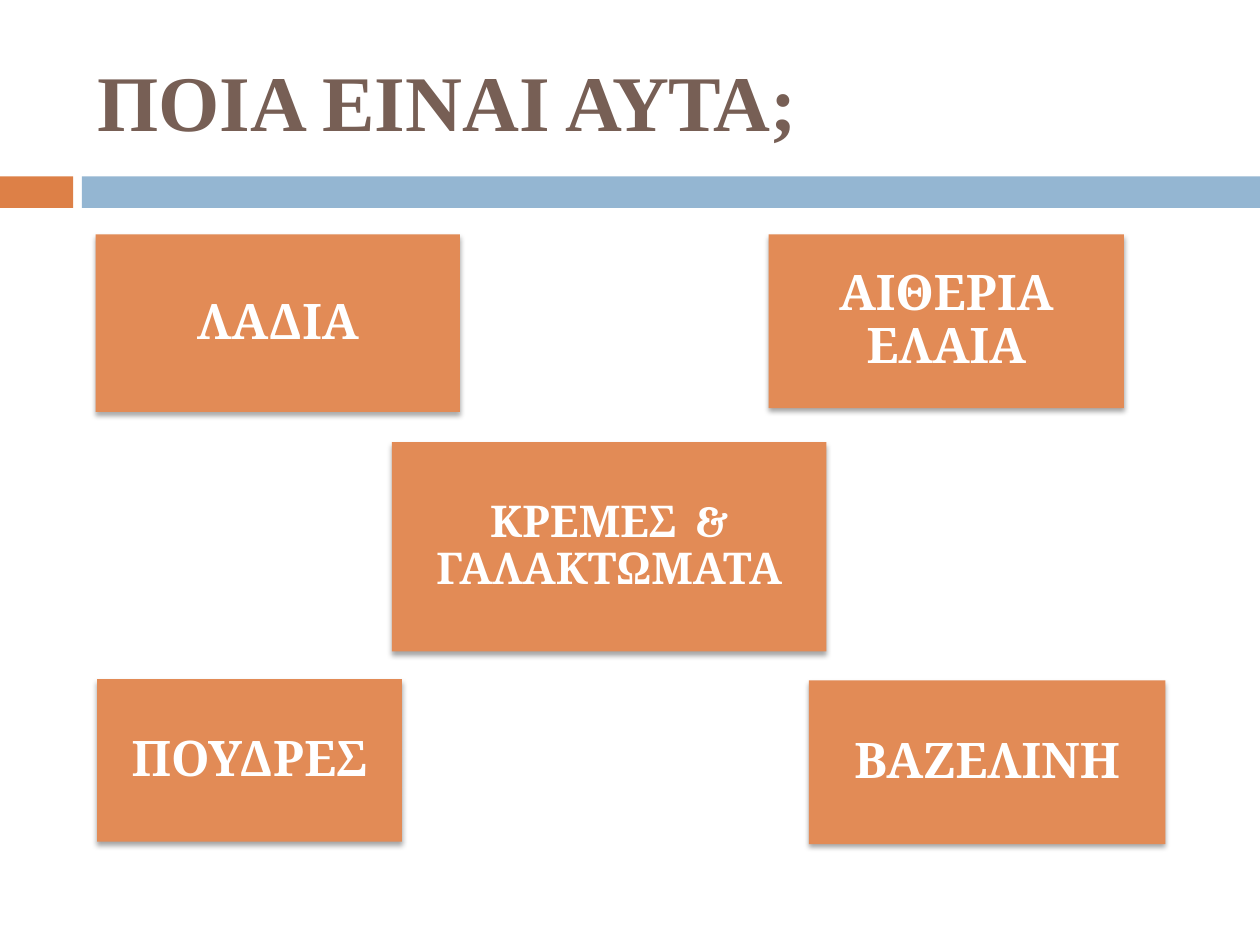
from lxml import etree
from pptx import Presentation
from pptx.dml.color import RGBColor
from pptx.enum.shapes import MSO_SHAPE
from pptx.enum.text import MSO_ANCHOR, PP_ALIGN
from pptx.oxml import parse_xml
from pptx.oxml.ns import nsdecls, qn
from pptx.util import Inches, Pt

RECT = MSO_SHAPE.RECTANGLE
MIDDLE = MSO_ANCHOR.MIDDLE
LEFT, CENTER = PP_ALIGN.LEFT, PP_ALIGN.CENTER

SHADOW = (
    f'<a:outerShdw {nsdecls("a")} blurRad="38100" dist="25400" dir="5400000" '
    'rotWithShape="0"><a:srgbClr val="000000"><a:alpha val="35000"/>'
    '</a:srgbClr></a:outerShdw>'
)


def add_box(place, color):
    box = slide.shapes.add_shape(RECT, *[Inches(n) for n in place])
    box.shadow.inherit = False
    box.fill.solid()
    box.fill.fore_color.rgb = RGBColor.from_string(color)
    box.line.fill.background()
    return box


def set_text(shape, text, size, font, color, align=CENTER, inset=0.1, spacing=None):
    frame = shape.text_frame
    frame.word_wrap = True
    frame.vertical_anchor = MIDDLE
    frame.margin_left = frame.margin_right = Inches(inset)
    frame.margin_top = frame.margin_bottom = Inches(inset)
    para = frame.paragraphs[0]
    para.alignment = align
    para.line_spacing = spacing
    run = para.add_run()
    run.text = text
    run.font.size = Pt(size)
    run.font.name = font
    run.font.bold = True
    run.font.color.rgb = RGBColor.from_string(color)


deck = Presentation()
deck.slide_width, deck.slide_height = Inches(10), Inches(7.5)
slide = deck.slides.add_slide(deck.slide_layouts[5])

title = slide.shapes.title
title.left, title.top = Inches(0.67), Inches(0.25)
title.width, title.height = Inches(8.92), Inches(1.08)
set_text(title, "ΠΟΙΑ ΕΙΝΑΙ ΑΥΤΑ;", 45, "Times New Roman", "775F55", align=LEFT)

add_box((0, 1.4, 0.58, 0.25), "DD8047")
add_box((0.65, 1.4, 9.35, 0.25), "94B6D2")

cards = [
    ("ΛΑΔΙΑ", 28, (0.76, 1.86, 2.89, 1.41)),
    ("ΑΙΘΕΡΙΑ ΕΛΑΙΑ", 28, (6.1, 1.86, 2.82, 1.38)),
    ("ΚΡΕΜΕΣ  & ΓΑΛΑΚΤΩΜΑΤΑ", 25, (3.11, 3.51, 3.45, 1.66)),
    ("ΠΟΥΔΡΕΣ", 28, (0.77, 5.39, 2.42, 1.29)),
    ("ΒΑΖΕΛΙΝΗ", 28, (6.42, 5.4, 2.83, 1.3)),
]
for text, size, place in cards:
    card = add_box(place, "E28B56")
    effects = card._element.spPr.find(qn("a:effectLst"))
    effects.append(etree.fromstring(SHADOW))
    set_text(card, text, size, "Cambria", "FFFFFF", inset=0.12, spacing=0.9)

deck.save("out.pptx")
